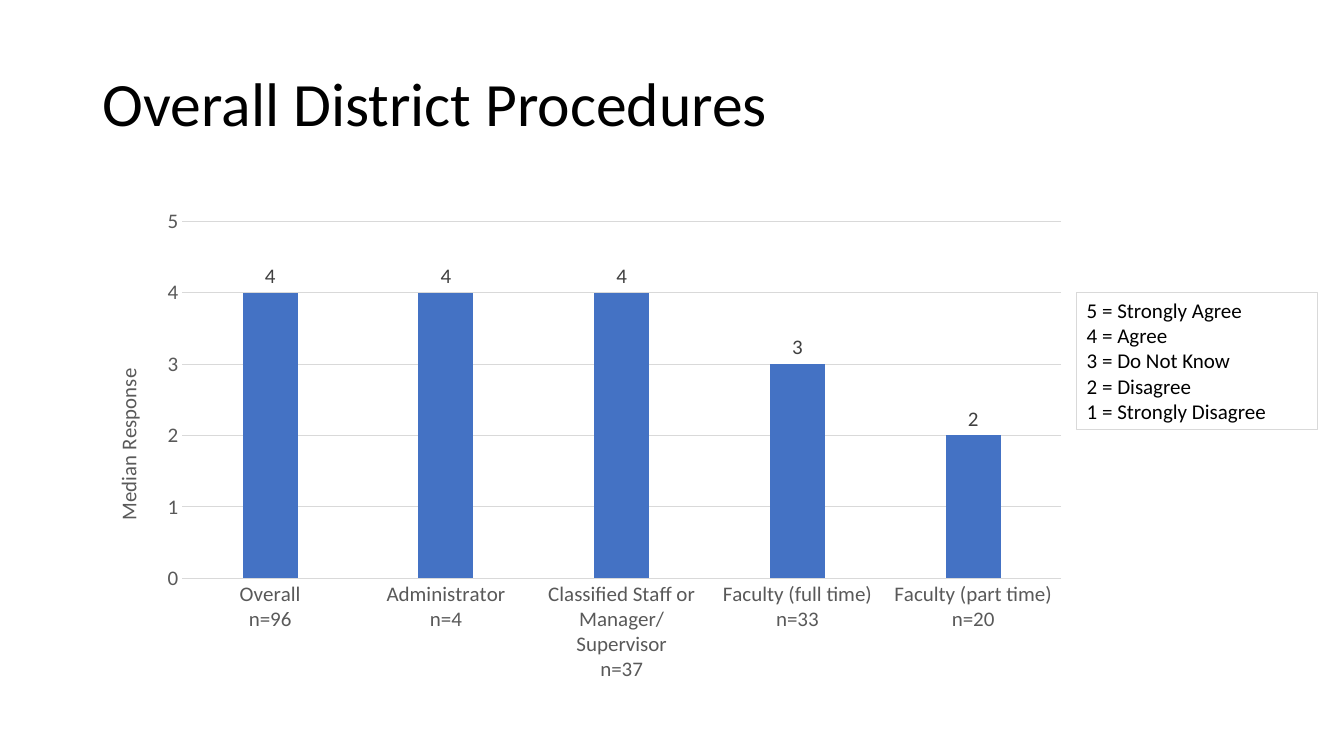
import dataclasses

import pptx
import pptx.chart.data
import pptx.dml.color
import pptx.enum.chart
import pptx.enum.shapes
import pptx.enum.text
import pptx.oxml
import pptx.oxml.ns
import pptx.util


@dataclasses.dataclass(frozen=True)
class Theme:
    font: str = "Calibri"
    title_size: int = 44
    body_size: int = 15
    ink: str = "000000"
    axis_text: str = "595959"
    label_text: str = "404040"
    rule: str = "D9D9D9"
    bar: str = "4472C4"
    rule_width: float = 0.75


THEME = Theme()
PAGE_WIDTH, PAGE_HEIGHT = 13.33, 7.5
LEFT = 0.92 / PAGE_WIDTH
CHART_WIDTH = 9.76 / PAGE_WIDTH

# Median response of each group
RESPONSES = {
    "Overall\nn=96": 4,
    "Administrator\nn=4": 4,
    "Classified Staff or Manager/Supervisor\nn=37": 4,
    "Faculty (full time)\nn=33": 3,
    "Faculty (part time)\nn=20": 2,
}
SCALE = ["Strongly Disagree", "Disagree", "Do Not Know", "Agree", "Strongly Agree"]
PLOT_SHARES = {"x": 0.091, "y": 0.041, "w": 0.893, "h": 0.752}


def place(left, top, width, height):
    """Turn shares of the slide into lengths."""
    return [pptx.util.Inches(share * side) for share, side in
            zip((left, top, width, height), (PAGE_WIDTH, PAGE_HEIGHT) * 2)]


def rgb(value):
    return pptx.dml.color.RGBColor.from_string(value)


def style_font(font, size, color):
    font.name = THEME.font
    font.size = pptx.util.Pt(size)
    font.bold = False
    font.color.rgb = rgb(color)


def style_rule(line):
    line.color.rgb = rgb(THEME.rule)
    line.width = pptx.util.Pt(THEME.rule_width)


def write_lines(frame, lines, size):
    frame.word_wrap = True
    frame.text = "\n".join(lines)
    for para in frame.paragraphs:
        para.alignment = pptx.enum.text.PP_ALIGN.LEFT
        for span in para.runs:
            style_font(span.font, size, THEME.ink)


def add_title(page, text, area):
    frame = page.shapes.add_textbox(*area).text_frame
    write_lines(frame, [text], THEME.title_size)
    frame.vertical_anchor = pptx.enum.text.MSO_ANCHOR.MIDDLE
    frame.paragraphs[0].line_spacing = 0.9


def add_scale_key(page, lines, area):
    box = page.shapes.add_shape(pptx.enum.shapes.MSO_SHAPE.RECTANGLE, *area)
    box.shadow.inherit = False
    box.fill.background()
    style_rule(box.line)
    write_lines(box.text_frame, lines, THEME.body_size)
    box.text_frame.vertical_anchor = pptx.enum.text.MSO_ANCHOR.TOP
    box.text_frame.auto_size = pptx.enum.text.MSO_AUTO_SIZE.SHAPE_TO_FIT_TEXT


def fix_plot_area(chart, shares):
    """Set the inner plot area as shares of the chart."""
    qn = pptx.oxml.ns.qn
    plot_area = chart.plots[0]._element.getparent()
    for old in plot_area.findall(qn("c:layout")):
        plot_area.remove(old)
    settings = {"layoutTarget": "inner", "xMode": "edge", "yMode": "edge", **shares}
    body = "".join(f'<c:{tag} val="{value}"/>' for tag, value in settings.items())
    plot_area.insert(0, pptx.oxml.parse_xml(
        f'<c:layout {pptx.oxml.ns.nsdecls("c")}>'
        f"<c:manualLayout>{body}</c:manualLayout></c:layout>"))


def style_axis(axis):
    axis.major_tick_mark = pptx.enum.chart.XL_TICK_MARK.NONE
    axis.minor_tick_mark = pptx.enum.chart.XL_TICK_MARK.NONE
    style_font(axis.tick_labels.font, THEME.body_size, THEME.axis_text)


def add_response_chart(page, responses, area):
    data = pptx.chart.data.CategoryChartData()
    data.categories = list(responses)
    data.add_series("Series 1", list(responses.values()))
    chart = page.shapes.add_chart(
        pptx.enum.chart.XL_CHART_TYPE.COLUMN_CLUSTERED, *area, data).chart
    chart.has_legend = False
    chart.has_title = False
    style_font(chart.font, 10, THEME.ink)

    # Axes
    groups, values = chart.category_axis, chart.value_axis
    style_axis(groups)
    style_rule(groups.format.line)
    style_axis(values)
    values.format.line.fill.background()
    values.minimum_scale, values.maximum_scale, values.major_unit = 0, 5, 1
    values.tick_labels.number_format = "#,##0"
    values.tick_labels.number_format_is_linked = False
    style_rule(values.major_gridlines.format.line)
    title = values.axis_title.text_frame
    title.text = "Median Response"
    style_font(title.paragraphs[0].runs[0].font, THEME.body_size, THEME.axis_text)

    # Columns and their labels
    plot = chart.plots[0]
    plot.gap_width, plot.overlap = 219, -27
    plot.vary_by_categories = False
    series = plot.series[0]
    series.format.fill.solid()
    series.format.fill.fore_color.rgb = rgb(THEME.bar)
    labels = series.data_labels
    labels.show_value = True
    labels.position = pptx.enum.chart.XL_LABEL_POSITION.OUTSIDE_END
    labels.number_format = "0"
    labels.number_format_is_linked = False
    style_font(labels.font, THEME.body_size, THEME.label_text)
    fix_plot_area(chart, PLOT_SHARES)


def main():
    deck = pptx.Presentation()
    deck.slide_width = pptx.util.Inches(PAGE_WIDTH)
    deck.slide_height = pptx.util.Inches(PAGE_HEIGHT)
    page = deck.slides.add_slide(deck.slide_layouts[6])

    add_title(page, "Overall District Procedures",
              place(LEFT, 0.045, 1 - 2 * LEFT, 0.193))
    add_response_chart(page, RESPONSES, place(LEFT, 0.267, CHART_WIDTH, 0.635))
    key = [f"{score} = {name}" for score, name in enumerate(SCALE, 1)]
    add_scale_key(page, key[::-1], place(LEFT + CHART_WIDTH, 0.387, 0.179, 0.181))

    deck.save("out.pptx")


if __name__ == "__main__":
    main()
